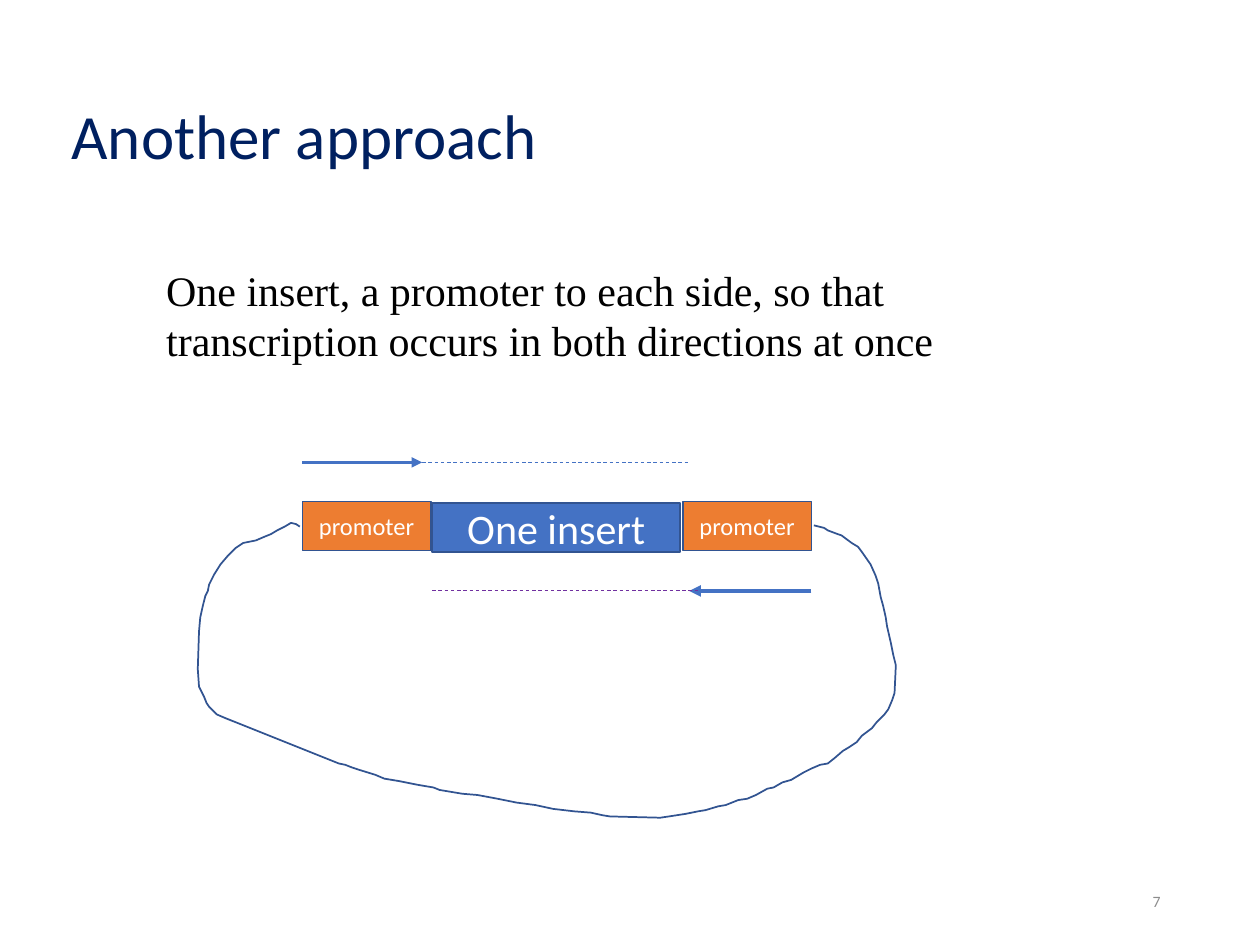
import pptx
import pptx.util
import pptx.dml.color
import pptx.enum.dml
import pptx.enum.shapes
import pptx.enum.text
import pptx.oxml
import pptx.oxml.ns

Inches, Pt = pptx.util.Inches, pptx.util.Pt
RGB = pptx.dml.color.RGBColor
ALIGN = pptx.enum.text.PP_ALIGN
ANCHOR = pptx.enum.text.MSO_ANCHOR
DASH = pptx.enum.dml.MSO_LINE.DASH

NAVY = RGB(0x00, 0x20, 0x60)
BLUE = RGB(0x44, 0x72, 0xC4)
EDGE = RGB(0x32, 0x54, 0x91)
ORANGE = RGB(0xED, 0x7D, 0x31)
PURPLE = RGB(0x70, 0x30, 0xA0)
GRAY = RGB(0x8C, 0x8C, 0x8C)
WHITE = RGB(0xFF, 0xFF, 0xFF)
BLACK = RGB(0, 0, 0)

# text, (left, top, width, height), format
TEXTS = [
    ("Another approach", (0.47, 0.48, 8.5, 1.25),
     dict(size=36, color=NAVY, anchor=ANCHOR.MIDDLE, space=0.9)),
    ("7", (7.06, 6.95, 2.25, 0.4),
     dict(size=9, color=GRAY, align=ALIGN.RIGHT, anchor=ANCHOR.MIDDLE)),
    ("One insert, a promoter to each side, so that transcription occurs "
     "in both directions at once", (1.22, 2.05, 7.32, 0.91),
     dict(size=24, color=BLACK, font="Times New Roman")),
]

# text, left, top, width, fill, text size
BOX_H = 0.39
BOXES = [
    ("One insert", 3.43, 3.99, 1.97, BLUE, 24),
    ("promoter", 2.4, 3.98, 1.02, ORANGE, 14),
    ("promoter", 5.42, 3.98, 1.02, ORANGE, 14),
]

# start x, end x, y, colour, width, is transcript (dashed, no arrowhead)
TOP, LOW = 3.67, 4.69
LINES = [
    (2.4, 3.35, TOP, BLUE, 1.5, False),
    (6.44, 5.47, LOW, BLUE, 2.25, False),
    (3.35, 5.47, TOP, BLUE, 0.5, True),
    (3.43, 5.55, LOW, PURPLE, 0.5, True),
]

# plasmid loop, clockwise from the right promoter to the left one
LOOP = [
    (6.46, 4.17), (6.54, 4.19), (6.57, 4.21), (6.65, 4.24), (6.68, 4.25),
    (6.76, 4.31), (6.81, 4.34), (6.84, 4.38), (6.91, 4.48), (6.95, 4.57),
    (6.97, 4.63), (6.99, 4.74), (7.01, 4.81), (7.03, 4.9), (7.04, 4.97),
    (7.07, 5.1), (7.09, 5.2), (7.11, 5.28), (7.1, 5.5), (7.08, 5.56),
    (7.05, 5.63), (7.02, 5.67), (6.96, 5.73), (6.92, 5.78), (6.84, 5.84),
    (6.8, 5.89), (6.74, 5.93), (6.69, 5.96), (6.62, 6.02), (6.57, 6.06),
    (6.51, 6.07), (6.44, 6.1), (6.38, 6.13), (6.28, 6.19), (6.21, 6.21),
    (6.14, 6.25), (6.09, 6.26), (6.0, 6.31), (5.93, 6.34), (5.86, 6.35),
    (5.76, 6.39), (5.7, 6.4), (5.6, 6.43), (5.54, 6.44), (5.44, 6.46),
    (5.31, 6.48), (5.24, 6.49), (4.84, 6.48), (4.78, 6.47), (4.69, 6.45),
    (4.56, 6.44), (4.39, 6.42), (4.25, 6.39), (4.1, 6.37), (3.95, 6.34),
    (3.79, 6.31), (3.67, 6.3), (3.49, 6.27), (3.44, 6.25), (3.32, 6.23),
    (3.17, 6.2), (3.05, 6.18), (2.98, 6.15), (2.85, 6.11), (2.79, 6.09),
    (2.74, 6.07), (2.69, 6.06), (1.79, 5.7), (1.72, 5.67), (1.66, 5.61),
    (1.64, 5.58), (1.62, 5.53), (1.58, 5.45), (1.57, 5.31), (1.58, 5.01),
    (1.59, 4.9), (1.61, 4.81), (1.63, 4.73), (1.65, 4.69), (1.66, 4.64),
    (1.7, 4.56), (1.75, 4.48), (1.81, 4.41), (1.87, 4.35), (1.93, 4.31),
    (2.03, 4.29), (2.1, 4.26), (2.15, 4.24), (2.2, 4.21), (2.26, 4.18),
    (2.31, 4.15), (2.35, 4.16), (2.38, 4.18),
]


def write(shape, text, size, color, font="Calibri", align=ALIGN.LEFT,
          anchor=ANCHOR.TOP, space=None):
    frame = shape.text_frame
    frame.word_wrap = True
    frame.vertical_anchor = anchor
    para = frame.paragraphs[0]
    para.alignment = align
    if space:
        para.line_spacing = space
    run = para.add_run()
    run.text = text
    run.font.name = font
    run.font.size = Pt(size)
    run.font.color.rgb = color


def outline(shape):
    shape.shadow.inherit = False
    shape.line.color.rgb = EDGE
    shape.line.width = Pt(1)


def add_xml(parent, tag, **attrs):
    node = pptx.oxml.ns.qn(tag)
    item = parent.makeelement(node, attrs)
    parent.append(item)


deck = pptx.Presentation()
deck.slide_width, deck.slide_height = Inches(10), Inches(7.5)
slide = deck.slides.add_slide(deck.slide_layouts[6])
shapes = slide.shapes

for text, place, style in TEXTS:
    write(shapes.add_textbox(*map(Inches, place)), text, **style)

for text, left, top, width, fill, size in BOXES:
    box = shapes.add_shape(
        pptx.enum.shapes.MSO_SHAPE.RECTANGLE,
        *map(Inches, (left, top, width, BOX_H)))
    box.fill.solid()
    box.fill.fore_color.rgb = fill
    outline(box)
    write(box, text, size, WHITE, align=ALIGN.CENTER, anchor=ANCHOR.MIDDLE)

points = [(Inches(x), Inches(y)) for x, y in LOOP]
pen = shapes.build_freeform(*points[0])
pen.add_line_segments(points[1:], close=False)
loop = pen.convert_to_shape()
loop.fill.background()
outline(loop)

for start, end, y, color, width, dashed in LINES:
    line = shapes.add_connector(
        pptx.enum.shapes.MSO_CONNECTOR.STRAIGHT,
        *map(Inches, (start, y, end, y)))
    line.line.color.rgb = color
    line.line.width = Pt(width)
    if dashed:
        line.line.dash_style = DASH
    else:
        add_xml(line.line._get_or_add_ln(), "a:tailEnd", type="triangle")
    add_xml(line._element.spPr, "a:effectLst")

deck.save("out.pptx")
